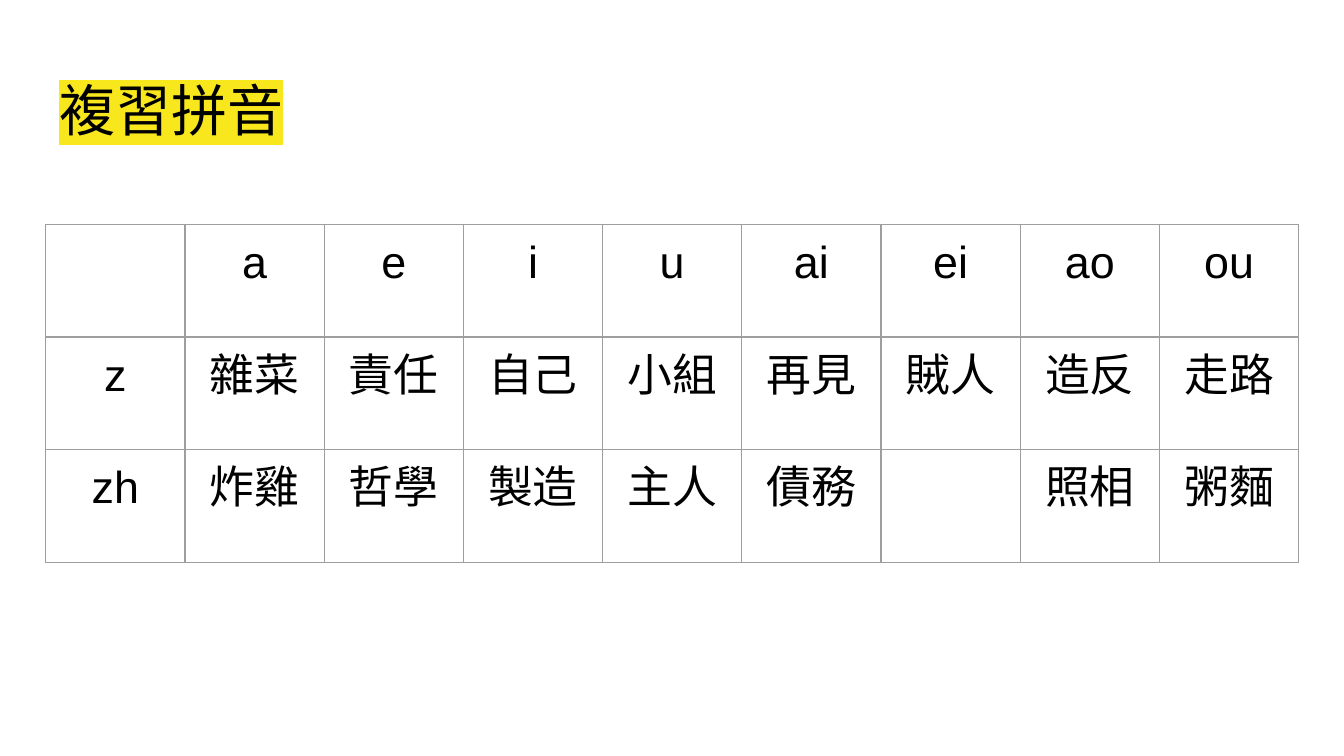
from dataclasses import dataclass

from lxml.etree import SubElement
from pptx import Presentation
from pptx.dml.color import RGBColor
from pptx.enum.text import MSO_ANCHOR as Anchor, PP_ALIGN as Align
from pptx.oxml.ns import qn
from pptx.util import Pt


@dataclass(frozen=True)
class Theme:
    ink: str = "000000"
    highlight: str = "F8E71C"
    border: str = "9E9E9E"
    title_font: str = "Roboto Condensed"
    body_font: str = "Arial"
    title_size: int = 30
    body_size: int = 24
    border_width: float = 0.75
    inset: float = 7.2


theme = Theme()


def add_span(para, text, font, size):
    """Add a run whose Latin and East Asian fonts are the same."""
    span = para.add_run()
    span.text = text
    span.font.size = Pt(size)
    span.font.color.rgb = RGBColor.from_string(theme.ink)
    span.font.name = font
    SubElement(span.font._element, qn("a:ea"), typeface=font)
    return span


def add_borders(cell):
    properties = cell._tc.get_or_add_tcPr()
    for side in ("lnL", "lnR", "lnT", "lnB"):
        line = SubElement(properties, qn(f"a:{side}"), w=str(Pt(theme.border_width)))
        fill = SubElement(line, qn("a:solidFill"))
        SubElement(fill, qn("a:srgbClr"), val=theme.border)


deck = Presentation()
deck.slide_width, deck.slide_height = Pt(720), Pt(405)
page = deck.slides.add_slide(deck.slide_layouts[5])

# Title with a highlighter behind the words
title = page.shapes.title
title.left, title.top, title.width, title.height = Pt(24.5), Pt(36), Pt(671), Pt(45)
frame = title.text_frame
frame.word_wrap = True
frame.vertical_anchor = Anchor.MIDDLE
frame.margin_left = frame.margin_right = Pt(theme.inset)
frame.margin_top = frame.margin_bottom = Pt(theme.inset)
para = frame.paragraphs[0]
para.alignment = Align.LEFT
span = add_span(para, "複習拼音", theme.title_font, theme.title_size)
highlight = SubElement(span.font._element, qn("a:highlight"))
SubElement(highlight, qn("a:srgbClr"), val=theme.highlight)
span.font._element.find(qn("a:solidFill")).addnext(highlight)

# Pinyin grid: initials down the side, finals along the top
finals = ["a", "e", "i", "u", "ai", "ei", "ao", "ou"]
words = {
    "z": ["雜菜", "責任", "自己", "小組", "再見", "賊人", "造反", "走路"],
    "zh": ["炸雞", "哲學", "製造", "主人", "債務", "", "照相", "粥麵"],
}
grid = [["", *finals]] + [[initial, *row] for initial, row in words.items()]
column_width, row_height = 74.6, 60.4

table = page.shapes.add_table(
    len(grid), len(grid[0]), Pt(24.5), Pt(120.2),
    Pt(column_width * len(grid[0])), Pt(row_height * len(grid)),
).table
table.first_row = table.horz_banding = False
for column in table.columns:
    column.width = Pt(column_width)
for row in table.rows:
    row.height = Pt(row_height)

for row_index, texts in enumerate(grid):
    for column_index, text in enumerate(texts):
        cell = table.cell(row_index, column_index)
        cell.margin_left = cell.margin_right = Pt(theme.inset)
        cell.margin_top = cell.margin_bottom = Pt(theme.inset)
        cell.vertical_anchor = Anchor.TOP
        add_borders(cell)
        cell.fill.background()
        if text:
            para = cell.text_frame.paragraphs[0]
            para.alignment = Align.CENTER
            add_span(para, text, theme.body_font, theme.body_size)

deck.save("out.pptx")
